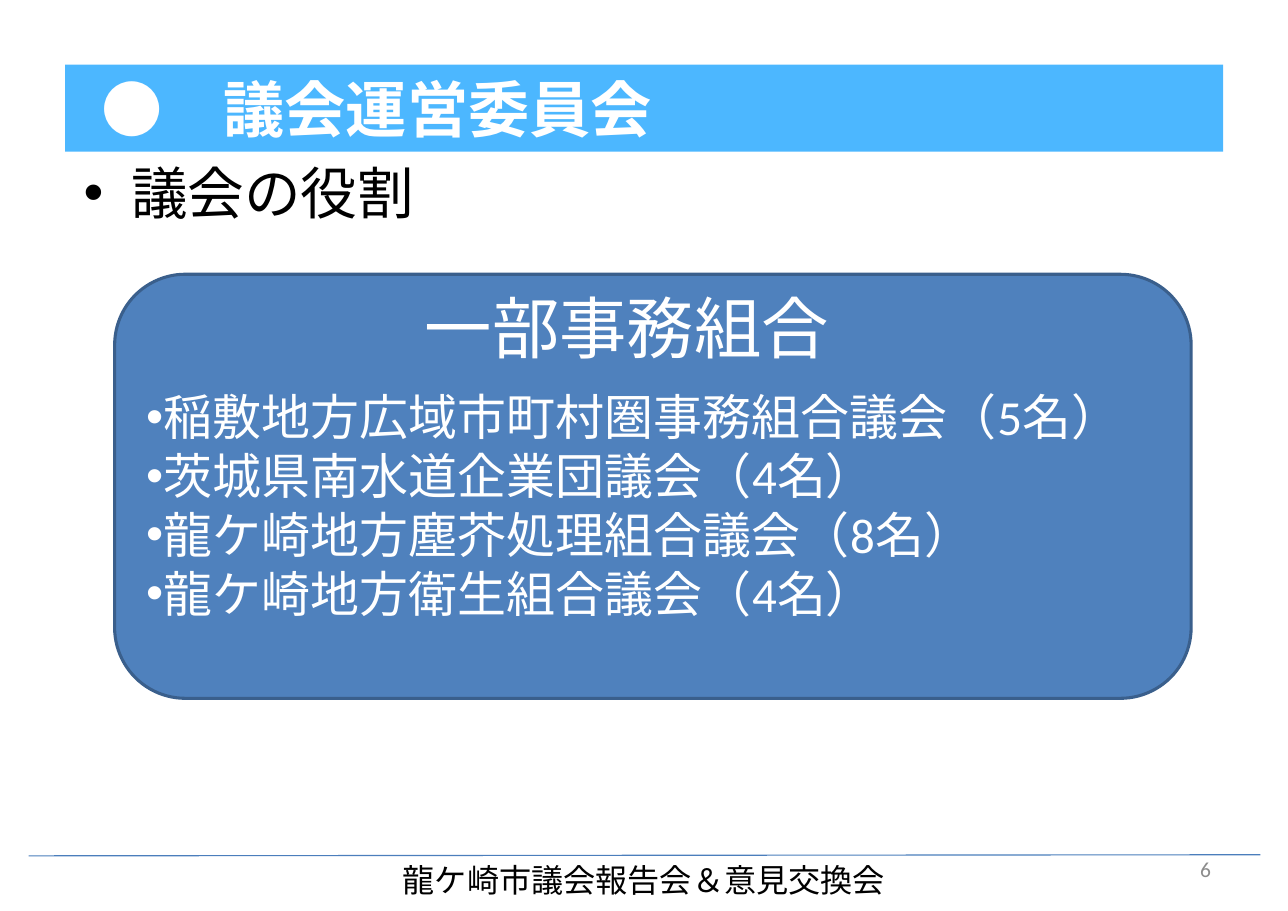
from dataclasses import dataclass

from lxml import etree
from pptx import Presentation
from pptx.dml.color import RGBColor
from pptx.enum.lang import MSO_LANGUAGE_ID
from pptx.enum.shapes import MSO_CONNECTOR, MSO_SHAPE
from pptx.enum.text import MSO_ANCHOR, MSO_AUTO_SIZE, PP_ALIGN
from pptx.oxml.ns import qn
from pptx.util import Inches, Pt

RECT, ROUNDED = MSO_SHAPE.RECTANGLE, MSO_SHAPE.ROUNDED_RECTANGLE
STRAIGHT = MSO_CONNECTOR.STRAIGHT
LEFT, CENTER, RIGHT = PP_ALIGN.LEFT, PP_ALIGN.CENTER, PP_ALIGN.RIGHT
TOP, MIDDLE = MSO_ANCHOR.TOP, MSO_ANCHOR.MIDDLE
NO_AUTOFIT = MSO_AUTO_SIZE.NONE
JAPANESE = MSO_LANGUAGE_ID.JAPANESE

WIDTH, HEIGHT = Inches(11.69), Inches(8.27)


@dataclass(frozen=True)
class Theme:
    band: str = "0099FF"
    band_alpha: int = 70
    box: str = "4F81BD"
    box_line: str = "3A5F8C"
    rule: str = "4B7EBC"
    white: str = "FFFFFF"
    black: str = "000000"
    grey: str = "8C8C8C"
    latin: str = "Calibri"
    gothic: str = "Noto Sans CJK JP"
    bullet: str = "Arial"
    heading_size: int = 44
    title_size: int = 40
    body_size: int = 37
    item_size: int = 32
    footer_size: int = 21
    number_size: int = 14


@dataclass(frozen=True)
class Area:
    """A rectangle in percent of the slide's width and height."""
    left: float
    top: float
    width: float
    height: float

    def emu(self) -> tuple[int, int, int, int]:
        return (across(self.left), down(self.top),
                across(self.width), down(self.height))


@dataclass(frozen=True)
class Assembly:
    name: str
    members: int


THEME = Theme()
BAND = Area(5.05, 7.1, 89.91, 9.55)
TITLE = Area(6.93, 7.13, 86.23, 9.55)
BODY = Area(5.56, 16.6, 42.43, 8.59)
BOX = Area(8.9, 30.11, 83.58, 46.55)
HEADING = Area(27.8, 30.83, 41.75, 10.88)
FOOTER = Area(25.06, 93.83, 49.87, 5.68)
NUMBER = Area(71.62, 92.7, 23.35, 5.32)
RULE_START, RULE_END = (2.22, 93.95), (97.86, 93.83)

TEXT_BOX_INSETS = (0.1, 0.05, 0.1, 0.05)
PLACEHOLDER_INSETS = (0.11, 0.06, 0.11, 0.06)
BOX_INSETS = (0.1, 0.38, 0.1, 0.05)
ASSEMBLIES = [
    Assembly("稲敷地方広域市町村圏事務組合議会", 5),
    Assembly("茨城県南水道企業団議会", 4),
    Assembly("龍ケ崎地方塵芥処理組合議会", 8),
    Assembly("龍ケ崎地方衛生組合議会", 4),
]


def across(percent: float) -> int:
    return round(WIDTH * percent / 100)


def down(percent: float) -> int:
    return round(HEIGHT * percent / 100)


def place(sp, area: Area) -> None:
    sp.left, sp.top, sp.width, sp.height = area.emu()


def write(sp, *lines: str, size: int, color: str, font: str = THEME.latin,
          bold: bool = False, align=LEFT, anchor=TOP,
          insets=TEXT_BOX_INSETS, bullet_indent: float = 0) -> None:
    """Fill a shape with one paragraph for each line, all in one format."""
    tf = sp.text_frame
    tf.word_wrap = True
    tf.auto_size = NO_AUTOFIT
    tf.vertical_anchor = anchor
    (tf.margin_left, tf.margin_top,
     tf.margin_right, tf.margin_bottom) = map(Inches, insets)
    for i, line in enumerate(lines):
        p = tf.add_paragraph() if i else tf.paragraphs[0]
        p.alignment = align
        p.space_before = Pt(0)
        if bullet_indent:
            pPr = p._p.get_or_add_pPr()
            pPr.set("marL", str(Inches(bullet_indent)))
            pPr.set("indent", str(-Inches(bullet_indent)))
            etree.SubElement(pPr, qn("a:buFont"), typeface=THEME.bullet)
            etree.SubElement(pPr, qn("a:buChar"), char="•")
        r = p.add_run()
        r.text = line
        r.font.size = Pt(size)
        r.font.bold = bold
        r.font.color.rgb = RGBColor.from_string(color)
        r.font.name = font
        r.font.language_id = JAPANESE
        etree.SubElement(r._r.get_or_add_rPr(), qn("a:ea"), typeface=font)


def add_filled(shapes, kind, area: Area, color: str):
    sp = shapes.add_shape(kind, *area.emu())
    sp.shadow.inherit = False
    sp.fill.solid()
    sp.fill.fore_color.rgb = RGBColor.from_string(color)
    sp.line.fill.background()
    return sp


def add_band(shapes) -> None:
    """Lay the translucent title band behind the placeholders."""
    sp = add_filled(shapes, RECT, BAND, THEME.band)
    color = sp._element.spPr.find(qn("a:solidFill"))[0]
    etree.SubElement(color, qn("a:alpha"), val=str(THEME.band_alpha * 1000))
    shapes._spTree.insert(2, sp._element)


def add_rule(shapes) -> None:
    (x1, y1), (x2, y2) = RULE_START, RULE_END
    rule = shapes.add_connector(STRAIGHT, across(x1), down(y1),
                                across(x2), down(y2))
    rule.line.color.rgb = RGBColor.from_string(THEME.rule)
    rule.line.width = Pt(0.75)
    etree.SubElement(rule._element.spPr, qn("a:effectLst"))


def add_text(shapes, area: Area, text: str, **style) -> None:
    write(shapes.add_textbox(*area.emu()), text, **style)


def add_assemblies(shapes) -> None:
    group = shapes.add_group_shape().shapes
    box = add_filled(group, ROUNDED, BOX, THEME.box)
    box.line.color.rgb = RGBColor.from_string(THEME.box_line)
    box.line.width = Pt(2)
    write(box, *(f"{a.name}（{a.members}名）" for a in ASSEMBLIES),
          size=THEME.item_size, color=THEME.white, anchor=MIDDLE,
          insets=BOX_INSETS, bullet_indent=0.16)
    add_text(group, HEADING, "一部事務組合", size=THEME.heading_size,
             color=THEME.white, align=CENTER)


def main() -> None:
    prs = Presentation()
    prs.slide_width, prs.slide_height = WIDTH, HEIGHT
    shapes = prs.slides.add_slide(prs.slide_layouts[1]).shapes
    title, body = shapes.title, shapes.placeholders[1]

    add_band(shapes)
    place(title, TITLE)
    write(title, "●　議会運営委員会", size=THEME.title_size, color=THEME.white,
          font=THEME.gothic, bold=True, anchor=MIDDLE,
          insets=PLACEHOLDER_INSETS)
    add_rule(shapes)
    add_text(shapes, FOOTER, "龍ケ崎市議会報告会＆意見交換会",
             size=THEME.footer_size, color=THEME.black, font=THEME.gothic,
             align=CENTER)
    place(body, BODY)
    write(body, "議会の役割", size=THEME.body_size, color=THEME.black,
          insets=PLACEHOLDER_INSETS, bullet_indent=0.43)
    add_assemblies(shapes)
    add_text(shapes, NUMBER, "6", size=THEME.number_size, color=THEME.grey,
             align=RIGHT, anchor=MIDDLE, insets=PLACEHOLDER_INSETS)
    prs.save("out.pptx")


if __name__ == "__main__":
    main()
